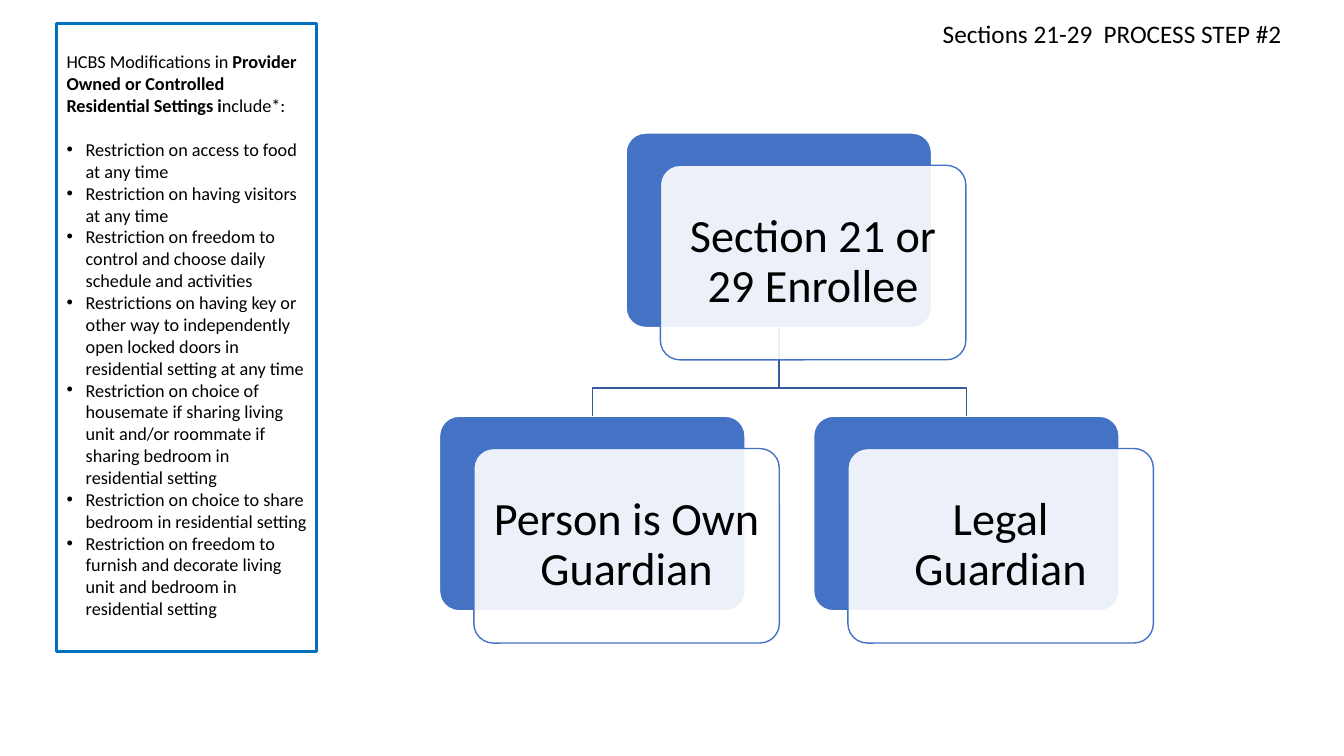
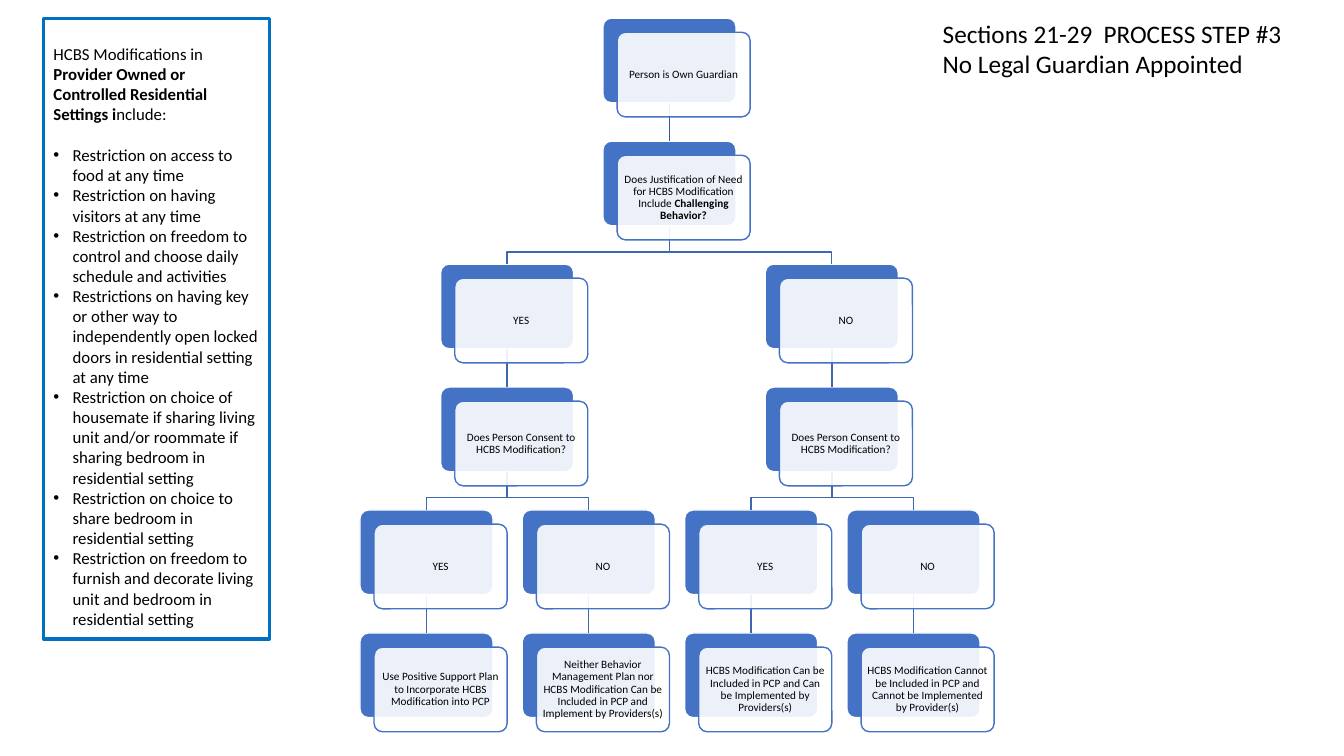
from dataclasses import dataclass
from typing import NamedTuple

import lxml.etree
import pptx
import pptx.dml.color
import pptx.enum.shapes
import pptx.enum.text
import pptx.oxml.ns
import pptx.util

# Shared style
SCALE = 9144  # EMU in one px, 100 px to the inch
FONT = "Calibri"
BLACK, WHITE = "000000", "FFFFFF"
CARD_BLUE, PANEL_BLUE = "4472C4", "0070C0"
ROOT_LINK, LOWER_LINK = "365B9D", "3E67B2"
LINE_HEIGHT = 1.22
TITLE_SIZE = 18
SHAPE = pptx.enum.shapes.MSO_SHAPE
ANCHOR = pptx.enum.text.MSO_ANCHOR
ALIGN = pptx.enum.text.PP_ALIGN
qn = pptx.oxml.ns.qn


class Run(NamedTuple):
    text: str
    bold: bool = False


class Box(NamedTuple):
    x: int
    y: int
    w: int
    h: int


class Node(NamedTuple):
    column: int  # counted in half columns
    row: int
    parent: int | None
    label: tuple[Run, ...]


@dataclass
class Tree:
    first: Box  # back card at column 0, row 0
    column_step: int
    row_step: int
    shift: tuple[int, int]  # front card against back card
    size: int
    margin: int
    nodes: list[Node]

    def box(self, node: Node) -> Box:
        x, y, w, h = self.first
        return Box(x + node.column * self.column_step // 2,
                   y + node.row * self.row_step, w, h)


@dataclass
class Page:
    title: list[str]
    title_box: Box
    panel_box: Box
    panel_size: int
    heading_end: str
    tree: Tree


def px(n: int) -> pptx.util.Emu:
    return pptx.util.Emu(n * SCALE)


def rgb(value: str) -> pptx.dml.color.RGBColor:
    return pptx.dml.color.RGBColor.from_string(value)


def place(sp, box: Box) -> None:
    sp.left, sp.top, sp.width, sp.height = map(px, box)


def set_line(sp, color: str, width: float = 1) -> None:
    sp.line.color.rgb = rgb(color)
    sp.line.width = pptx.util.Pt(width)


def add_runs(p, runs: tuple[Run, ...], size: int) -> None:
    for run in runs:
        r = p.add_run()
        r.text = run.text
        r.font.name = FONT
        r.font.size = pptx.util.Pt(size)
        r.font.bold = run.bold
        r.font.color.rgb = rgb(BLACK)


def prepare_frame(sp, anchor):
    tf = sp.text_frame
    tf.word_wrap = True
    tf.auto_size = pptx.enum.text.MSO_AUTO_SIZE.NONE
    tf.vertical_anchor = anchor
    return tf


def next_paragraph(tf, index: int):
    p = tf.add_paragraph() if index else tf.paragraphs[0]
    p.alignment = ALIGN.LEFT
    p.space_before = pptx.util.Pt(0)
    return p


def fill_title(s, page: Page) -> None:
    sp = s.shapes.title
    place(sp, page.title_box)
    tf = prepare_frame(sp, ANCHOR.TOP)
    for i, line in enumerate(page.title):
        add_runs(next_paragraph(tf, i), (Run(line),), TITLE_SIZE)


def fill_panel(s, page: Page) -> None:
    sp = s.placeholders[1]
    place(sp, page.panel_box)
    set_line(sp, PANEL_BLUE, 2.25)
    tf = prepare_frame(sp, ANCHOR.TOP)
    line = pptx.util.Pt(page.panel_size * LINE_HEIGHT)
    tf.margin_top = px(5) + line

    # Heading without a bullet, one line above the list
    p = next_paragraph(tf, 0)
    p.space_after = line
    pPr = p._p.get_or_add_pPr()
    pPr.set("marL", "0")
    pPr.set("indent", "0")
    lxml.etree.SubElement(pPr, qn("a:buNone"))
    add_runs(p, (*HEADING, Run(page.heading_end)), page.panel_size)

    # Bullets come from the template's body style
    for i, text in enumerate(RESTRICTIONS, 1):
        p = next_paragraph(tf, i)
        pPr = p._p.get_or_add_pPr()
        pPr.set("marL", str(px(19)))
        pPr.set("indent", str(-px(19)))
        add_runs(p, (Run(text),), page.panel_size)


def add_card(s, box: Box, fill: str, line: str):
    sp = s.shapes.add_shape(SHAPE.ROUNDED_RECTANGLE, *map(px, box))
    sp.adjustments[0] = 0.1
    sp.shadow.inherit = False
    sp.fill.solid()
    sp.fill.fore_color.rgb = rgb(fill)
    set_line(sp, line)
    return sp


def add_label_card(s, tree: Tree, node: Node) -> None:
    x, y, w, h = tree.box(node)
    dx, dy = tree.shift
    sp = add_card(s, Box(x + dx, y + dy, w, h), WHITE, CARD_BLUE)
    color = sp._element.spPr.find(f"{qn('a:solidFill')}/{qn('a:srgbClr')}")
    lxml.etree.SubElement(color, qn("a:alpha"), val="90000")
    tf = prepare_frame(sp, ANCHOR.MIDDLE)
    tf.margin_left = tf.margin_right = px(tree.margin)
    tf.margin_top = tf.margin_bottom = px(tree.margin)
    p = tf.paragraphs[0]
    p.alignment = ALIGN.CENTER
    p.line_spacing = 0.9
    p.space_after = pptx.util.Pt(tree.size * 0.35)
    add_runs(p, node.label, tree.size)


def add_link(s, parent, child, color: str) -> None:
    x1, y1 = parent.left + parent.width // 2, parent.top + parent.height
    x2, y2 = child.left + child.width // 2, child.top
    if x1 == x2:
        cn = s.shapes.add_connector(
            pptx.enum.shapes.MSO_CONNECTOR.STRAIGHT, x1, y1, x2, y2)
        cn.begin_connect(parent, 2)
        cn.end_connect(child, 0)
        set_line(cn, color)
        lxml.etree.SubElement(cn._element.spPr, qn("a:effectLst"))
        return
    bend = y1 + round((y2 - y1) * 0.68)
    fb = s.shapes.build_freeform(x1, y1)
    fb.add_line_segments([(x1, bend), (x2, bend), (x2, y2)], close=False)
    sp = fb.convert_to_shape()
    sp.shadow.inherit = False
    sp.fill.background()
    set_line(sp, color)


def draw_tree(s, tree: Tree) -> None:
    # Back cards, then links, then the translucent front cards
    backs = [add_card(s, tree.box(n), CARD_BLUE, WHITE) for n in tree.nodes]
    for node, back in zip(tree.nodes, backs):
        if node.parent is not None:
            color = LOWER_LINK if node.parent else ROOT_LINK
            add_link(s, backs[node.parent], back, color)
    for node in tree.nodes:
        add_label_card(s, tree, node)


# Content
HEADING = (Run("HCBS Modifications in "),
           Run("Provider Owned or Controlled Residential Settings i", True))
RESTRICTIONS = [
    "Restriction on access to food at any time",
    "Restriction on having visitors at any time",
    "Restriction on freedom to control and choose daily schedule and activities",
    "Restrictions on having key or other way to independently open locked "
    "doors in residential setting at any time",
    "Restriction on choice of housemate if sharing living unit and/or roommate "
    "if sharing bedroom in residential setting",
    "Restriction on choice to share bedroom in residential setting",
    "Restriction on freedom to furnish and decorate living unit and bedroom "
    "in residential setting",
]
YES, NO = (Run("YES"),), (Run("NO"),)
OWN_GUARDIAN = (Run("Person is Own Guardian"),)
CONSENT = (Run("Does Person Consent to HCBS Modification?"),)

ENROLLEE_TREE = Tree(
    first=Box(436, 132, 303, 193), column_step=371, row_step=281,
    shift=(34, 32), size=33, margin=14,
    nodes=[
        Node(1, 0, None, (Run("Section 21 or 29 Enrollee"),)),
        Node(0, 1, 0, OWN_GUARDIAN),
        Node(2, 1, 0, (Run("Legal Guardian"),)),
    ])

CONSENT_TREE = Tree(
    first=Box(357, 18, 132, 84), column_step=161, row_step=122,
    shift=(14, 14), size=8, margin=3,
    nodes=[
        Node(3, 0, None, OWN_GUARDIAN),
        Node(3, 1, 0, (
            Run("Does Justification of Need for HCBS Modification Include "),
            Run("Challenging Behavior?", True))),
        Node(1, 2, 1, YES),
        Node(5, 2, 1, NO),
        Node(1, 3, 2, CONSENT),
        Node(5, 3, 3, CONSENT),
        Node(0, 4, 4, YES),
        Node(2, 4, 4, NO),
        Node(4, 4, 5, YES),
        Node(6, 4, 5, NO),
        Node(0, 5, 6, (Run("Use Positive Support Plan to Incorporate HCBS "
                           "Modification into PCP"),)),
        Node(2, 5, 7, (Run("Neither Behavior Management Plan nor HCBS "
                           "Modification Can be Included in PCP and "
                           "Implement by Providers(s)"),)),
        Node(4, 5, 8, (Run("HCBS Modification Can be Included in PCP and "
                           "Can be Implemented by Providers(s)"),)),
        Node(6, 5, 9, (Run("HCBS Modification Cannot be Included in PCP and "
                           "Cannot be Implemented by Provider(s)"),)),
    ])

PAGES = [
    Page(["Sections 21-29  PROCESS STEP #2"], Box(925, 13, 391, 40),
         Box(56, 23, 258, 623), 13, "nclude*:", ENROLLEE_TREE),
    Page(["Sections 21-29  PROCESS STEP #3", "No Legal Guardian Appointed"],
         Box(925, 13, 391, 71),
         Box(43, 18, 224, 616), 12, "nclude:", CONSENT_TREE),
]


def main() -> None:
    prs = pptx.Presentation()
    prs.slide_width, prs.slide_height = px(1333), px(750)
    for page in PAGES:
        s = prs.slides.add_slide(prs.slide_layouts[1])
        fill_title(s, page)
        fill_panel(s, page)
        draw_tree(s, page.tree)
    prs.save("out.pptx")


if __name__ == "__main__":
    main()
